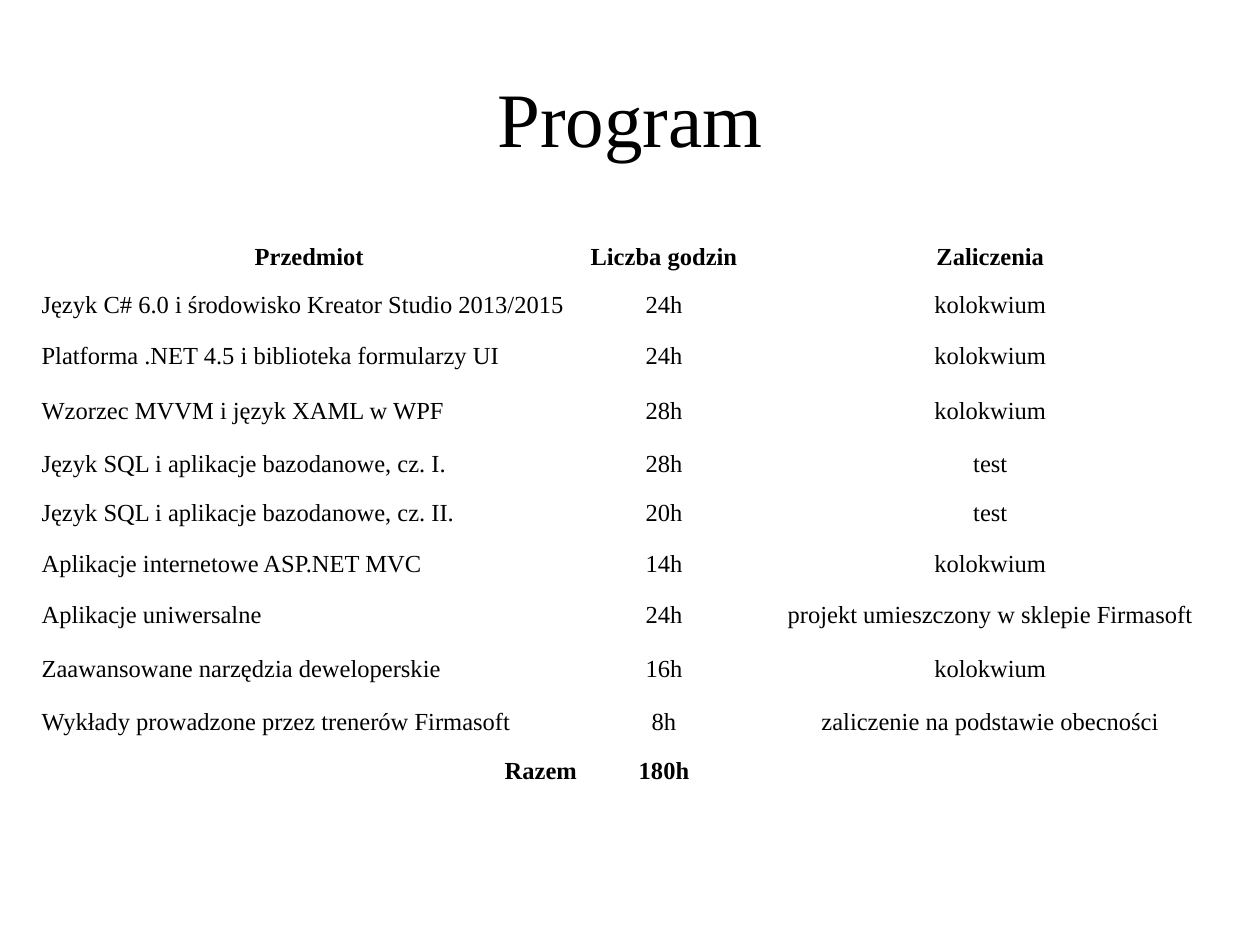
import pptx
import pptx.dml.color
import pptx.enum.text
import pptx.oxml.ns
import pptx.util
from lxml import etree
from pptx.util import Inches

FONT = "Times New Roman"
BLACK, WHITE = "000000", "FFFFFF"
ALIGN = pptx.enum.text.PP_ALIGN
MIDDLE = pptx.enum.text.MSO_ANCHOR.MIDDLE

COLUMN_WIDTHS = [4.35, 1.28, 3.9]
ROW_HEIGHTS = [0.37, 0.39, 0.42, 0.45, 0.39, 0.39, 0.42, 0.39, 0.46, 0.39, 0.39]
ROWS = [
    ("Przedmiot", "Liczba godzin", "Zaliczenia"),
    ("Język C# 6.0 i środowisko Kreator Studio 2013/2015", "24h", "kolokwium"),
    ("Platforma .NET 4.5 i biblioteka formularzy UI", "24h", "kolokwium"),
    ("Wzorzec MVVM i język XAML w WPF", "28h", "kolokwium"),
    ("Język SQL i aplikacje bazodanowe, cz. I.", "28h", "test"),
    ("Język SQL i aplikacje bazodanowe, cz. II.", "20h", "test"),
    ("Aplikacje internetowe ASP.NET MVC", "14h", "kolokwium"),
    ("Aplikacje uniwersalne", "24h", "projekt umieszczony w sklepie Firmasoft"),
    ("Zaawansowane narzędzia deweloperskie", "16h", "kolokwium"),
    ("Wykłady prowadzone przez trenerów Firmasoft", "8h", "zaliczenie na podstawie obecności"),
    ("Razem", "180h", ""),
]


def color(value):
    return pptx.dml.color.RGBColor.from_string(value)


def write(frame, text, size, align, bold=False):
    frame.text = text
    para = frame.paragraphs[0]
    para.alignment = align
    for span in para.runs:
        span.font.name = FONT
        span.font.size = pptx.util.Pt(size)
        span.font.bold = bold
        span.font.color.rgb = color(BLACK)


def add_title(page, text):
    box = page.shapes.add_textbox(Inches(0.5), Inches(0.3), Inches(9), Inches(1.25))
    box.text_frame.word_wrap = True
    box.text_frame.vertical_anchor = MIDDLE
    write(box.text_frame, text, 44, ALIGN.CENTER)


def set_border(cell, side, points, value):
    qn = pptx.oxml.ns.qn
    line = etree.SubElement(cell._tc.get_or_add_tcPr(), qn(f"a:ln{side}"),
                            w=str(pptx.util.Pt(points)))
    fill = etree.SubElement(line, qn("a:solidFill"))
    etree.SubElement(fill, qn("a:srgbClr"), val=value)


def format_cell(cell, header):
    cell.vertical_anchor = MIDDLE
    cell.margin_left = cell.margin_right = Inches(0.05)
    cell.margin_top = cell.margin_bottom = 0
    for side in "LRTB":
        set_border(cell, side, 3 if header and side == "B" else 1, WHITE)
    cell.fill.background()


def cell_alignment(row, column):
    if column or row == 0:
        return ALIGN.CENTER
    return ALIGN.RIGHT if row == len(ROWS) - 1 else ALIGN.LEFT


def add_program_table(page):
    table = page.shapes.add_table(
        len(ROWS), len(COLUMN_WIDTHS), Inches(0.28), Inches(1.86),
        Inches(sum(COLUMN_WIDTHS)), Inches(sum(ROW_HEIGHTS))).table
    table.first_row = table.horz_banding = False
    for column, width in zip(table.columns, COLUMN_WIDTHS):
        column.width = Inches(width)
    for row, height in zip(table.rows, ROW_HEIGHTS):
        row.height = Inches(height)
    for r, texts in enumerate(ROWS):
        for c, text in enumerate(texts):
            cell = table.cell(r, c)
            format_cell(cell, header=r == 0)
            write(cell.text_frame, text, 14, cell_alignment(r, c),
                  bold=r in (0, len(ROWS) - 1))


def main():
    deck = pptx.Presentation()
    deck.slide_width, deck.slide_height = Inches(10), Inches(7.5)
    page = deck.slides.add_slide(deck.slide_layouts[6])
    page.background.fill.solid()
    page.background.fill.fore_color.rgb = color(WHITE)
    add_title(page, "Program")
    add_program_table(page)
    deck.save("out.pptx")


if __name__ == "__main__":
    main()
